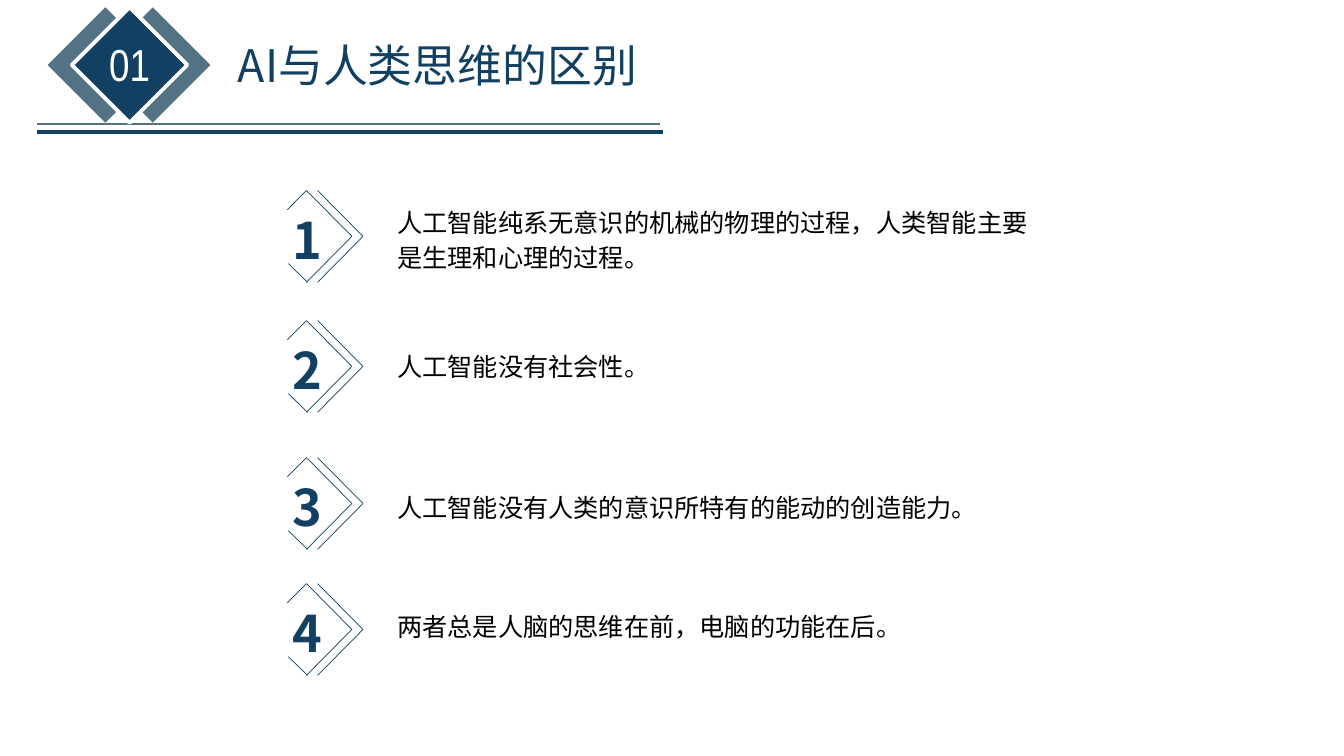
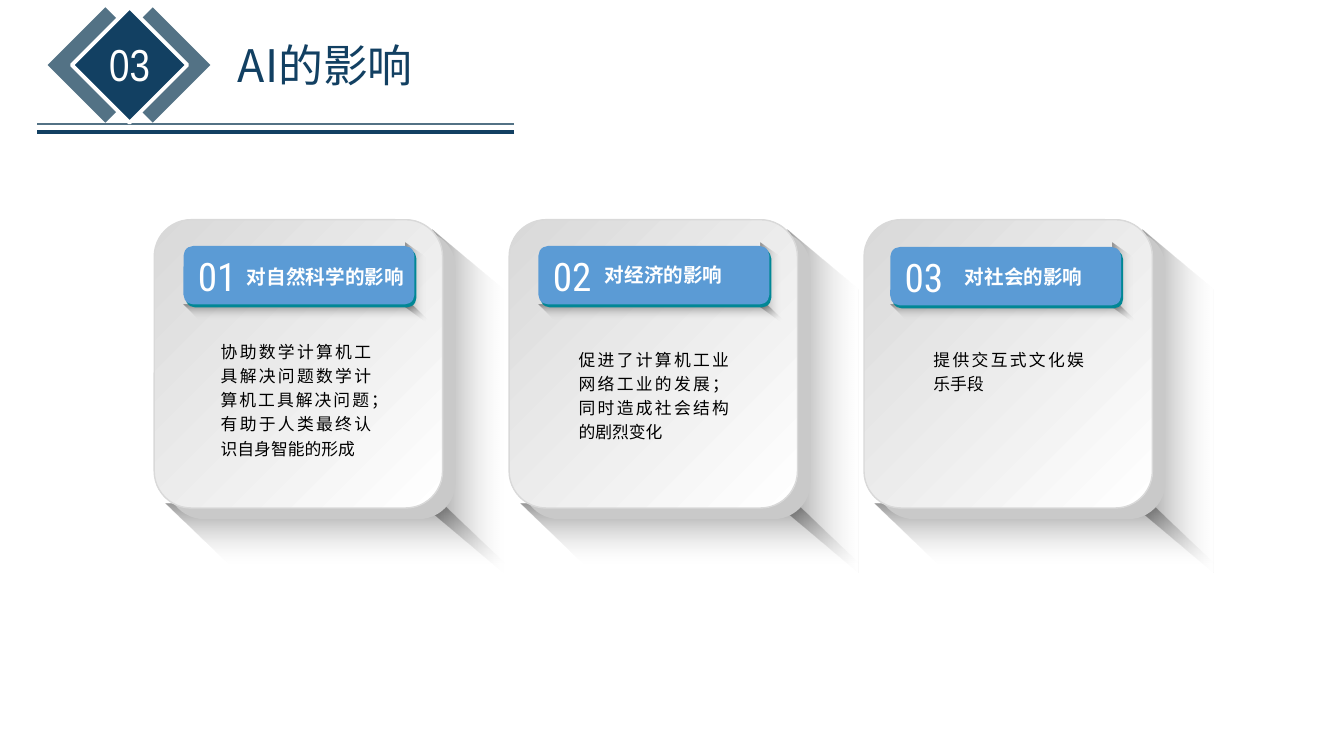
import pptx
import pptx.util
import pptx.dml.color
import pptx.enum.shapes
import pptx.enum.text
import pptx.oxml
import pptx.oxml.ns
from lxml import etree

Kind = pptx.enum.shapes.MSO_SHAPE
Side = pptx.enum.text.PP_ALIGN
Fit = pptx.enum.text.MSO_AUTO_SIZE
qn = pptx.oxml.ns.qn


class Theme:
    navy, slate, white, black = "124062", "537285", "FFFFFF", "000000"
    back, rim, blue, teal = "C9C9C9", "D9D9D9", "5B9BD5", "018795"
    sheen = (45, ((0, "D9D9D9", 100), (100, "FFFFFF", 100)))
    shade = (90, ((0, "000000", 40), (51, "6D6D6D", 20), (100, "D9D9D9", 0)))
    sans, slim, thin = "Noto Sans CJK SC", "Arial Narrow", "Roboto Condensed"
    head, digit, index, item, label, note = 32, 36, 28, 18, 14, 12


deck = pptx.Presentation()
deck.slide_width = pptx.util.Inches(13.33)
deck.slide_height = pptx.util.Inches(7.5)
cell = deck.slide_height / 75


def draw(page, kind, box, fill=None, edge=None, turn=0, flip="", bend=None):
    spots = [round(cell * n) for n in box]
    if kind == "text":
        return page.shapes.add_textbox(*spots)
    if kind == "line":
        shape = page.shapes.add_connector(pptx.enum.shapes.MSO_CONNECTOR.STRAIGHT, *spots)
    else:
        shape = page.shapes.add_shape(kind, *spots)
        shape.shadow.inherit = False
        shape.rotation = turn
        for axis in flip:
            shape._element.spPr.find(qn("a:xfrm")).set("flip" + axis, "1")
        if bend is not None:
            shape.adjustments[0] = bend
        if isinstance(fill, str):
            shape.fill.solid()
            shape.fill.fore_color.rgb = pptx.dml.color.RGBColor.from_string(fill)
        else:
            stops = "".join(
                f'<a:gs pos="{pos * 1000}"><a:srgbClr val="{tint}">'
                f'<a:alpha val="{alpha * 1000}"/></a:srgbClr></a:gs>'
                for pos, tint, alpha in fill[1])
            grad = pptx.oxml.parse_xml(
                f'<a:gradFill {pptx.oxml.ns.nsdecls("a")} rotWithShape="1"><a:gsLst>{stops}</a:gsLst>'
                f'<a:lin ang="{fill[0] * 60000}" scaled="0"/></a:gradFill>')
            shape._element.spPr.find(qn("a:prstGeom")).addnext(grad)
    if edge:
        shape.line.color.rgb = pptx.dml.color.RGBColor.from_string(edge[0])
        shape.line.width = pptx.util.Pt(edge[1])
    else:
        shape.line.fill.background()
    if kind == "line":
        etree.SubElement(shape._element.spPr, qn("a:effectLst"))
    return shape


def write(shape, texts, size, tint, face=Theme.sans, bold=False, side=Side.LEFT, pitch=1, gaps=None):
    frame = shape.text_frame
    frame.word_wrap = True
    frame.auto_size = Fit.NONE
    for n, text in enumerate(texts):
        para = frame.add_paragraph() if n else frame.paragraphs[0]
        para.alignment = side
        para.line_spacing = pitch
        para.space_before = pptx.util.Pt(gaps[n] if gaps else 0)
        run = para.add_run()
        run.text = text
        font = run.font
        font.size, font.bold, font.name = pptx.util.Pt(size), bold, face
        font.color.rgb = pptx.dml.color.RGBColor.from_string(tint)
        etree.SubElement(run._r.get_or_add_rPr(), qn("a:ea")).set("typeface", face)


crown = deck.slide_master.placeholders[0]
crown.left, crown.top, crown.width, crown.height = [round(cell * n) for n in (22.6, 3.2, 44.4, 6.4)]

pages = []
for form, code, title, ends in (
    (1, "01", "AI与人类思维的区别", (65.5, 65.8)),
    (5, "03", "AI的影响", (51, 51)),
):
    page = deck.slides.add_slide(deck.slide_layouts[form])
    pages.append(page)
    write(page.shapes.title, [title], Theme.head, Theme.navy)
    for end, y, edge in zip(ends, (12.3, 13.1), ((Theme.slate, 1), (Theme.navy, 3))):
        draw(page, "line", (end, y, 3.7, y), edge=edge)
    for x, fill, edge in (
        (11.1, Theme.slate, None),
        (6.4, Theme.slate, None),
        (8.8, Theme.navy, (Theme.white, 2.75)),
    ):
        draw(page, Kind.RECTANGLE, (x, 2.4, 8.1, 8.1), fill, edge, 45)
    write(draw(page, "text", (9.5, 3.2, 6.7, 6.4)), [code], Theme.head, Theme.white,
          Theme.slim, side=Side.CENTER)

first, second = pages

body = first.placeholders[1]
body.left, body.top, body.width, body.height = [round(cell * n) for n in (38.4, 19.6, 66.6, 46)]
write(body, (
    "人工智能纯系无意识的机械的物理的过程，人类智能主要是生理和心理的过程。",
    "人工智能没有社会性。",
    "人工智能没有人类的意识所特有的能动的创造能力。",
    "两者总是人脑的思维在前，电脑的功能在后。",
), Theme.item, Theme.black, pitch=1.15, gaps=(0, 53, 76.5, 60))
for para in body.text_frame.paragraphs:
    props = para._p.get_or_add_pPr()
    props.set("marL", "0")
    props.set("indent", "0")
    etree.SubElement(props, qn("a:buNone"))

for n, top in enumerate((18.9, 31.8, 45.4, 57.9), 1):
    for x, y, far, low in (
        (34.9, 4.55, 30.4, 9.1),
        (34.9, 4.55, 30.4, 0),
        (30.5, 9.1, 28.6, 7.25),
        (30.4, 0, 28.5, 1.9),
        (36, 4.55, 31.5, 9.1),
        (36, 4.55, 31.5, 0),
    ):
        draw(first, "line", (x, top + y, far, top + low), edge=(Theme.navy, 0.5))
    write(draw(first, "text", (28, top + 1.35, 3.9, 7.1)), [str(n)], Theme.digit, Theme.navy, bold=True)

cards = (
    ("对自然科学的影响", (23.5, 25.8, 21, 3.4), (18.2, 24.4), (20.9, 33),
     ("协助数学计算机工具解决问题数学计算机工具解决问题；", "有助于人类最终认识自身智能的形成")),
    ("对经济的影响", (59, 25.6, 15, 3.4), (53.4, 24.4), (56.4, 33.8),
     ("促进了计算机工业网络工业的发展；同时造成社会结构的剧烈变化",)),
    ("对社会的影响", (94.7, 25.8, 13.9, 3.4), (88.3, 24.5), (91.6, 33.8),
     ("提供交互式文化娱乐手段",)),
)
for n, (label, place, (tab, top), (left, high), notes) in enumerate(cards):
    x = 15.3 + 35.2 * n
    for kind, box, fill, edge, turn, flip, bend in (
        (Kind.PARALLELOGRAM, (x + 14.1, 36.3, 34.1, 7), Theme.shade, None, 90, "HV", 0.852),
        (Kind.PARALLELOGRAM, (x + 1.1, 50, 33.7, 5.9), Theme.shade, None, 0, "H", 1.068),
        (Kind.ROUNDED_RECTANGLE, (x + 1.3, 22.9, 28.6, 28.6), Theme.back, None, 0, "", 0.128),
        (Kind.ROUNDED_RECTANGLE, (x, 21.8, 28.6, 28.6), Theme.sheen, (Theme.rim, 1), 0, "", 0.128),
        (Kind.PARALLELOGRAM, (tab + 19.1, 27, 7.8, 2), Theme.shade, None, 90, "HV", 0.728),
        (Kind.PARALLELOGRAM, (tab, 30.2, 24.2, 1.5), Theme.shade, None, 0, "H", 1.068),
        (Kind.ROUNDED_RECTANGLE, (tab + 0.2, top + 0.3, 22.9, 5.8), Theme.teal, None, 0, "", None),
        (Kind.ROUNDED_RECTANGLE, (tab, top, 22.9, 5.8), Theme.blue, None, 0, "", None),
    ):
        draw(second, kind, box, fill, edge, turn, flip, bend)
    write(draw(second, "text", (tab, top + 0.1, 6.7, 5.7)), [f"{n + 1:02}"], Theme.index, Theme.white,
          Theme.thin, side=Side.CENTER)
    write(draw(second, "text", place), [label], Theme.label, Theme.white, bold=True)
    write(draw(second, "text", (left, high, 16.9, 13.1)), notes, Theme.note, Theme.black,
          side=Side.JUSTIFY, pitch=1.2)

deck.save("out.pptx")
